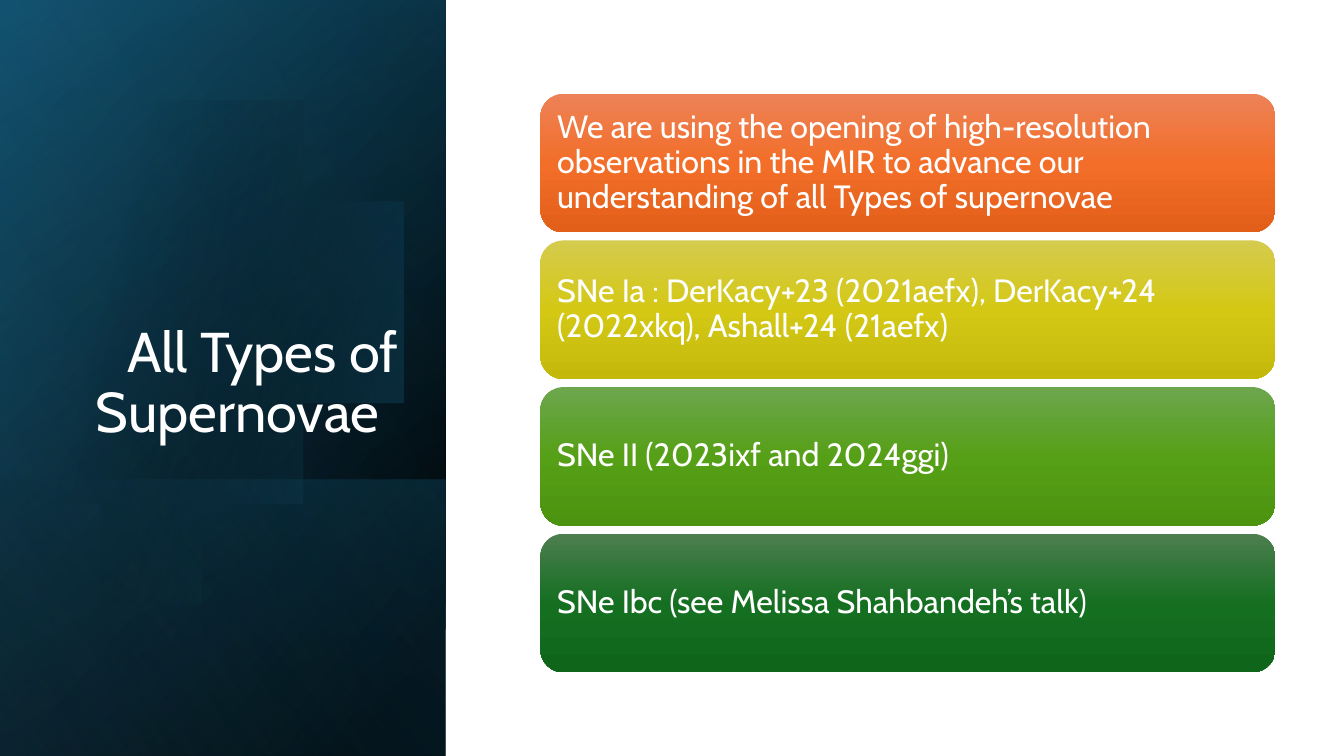
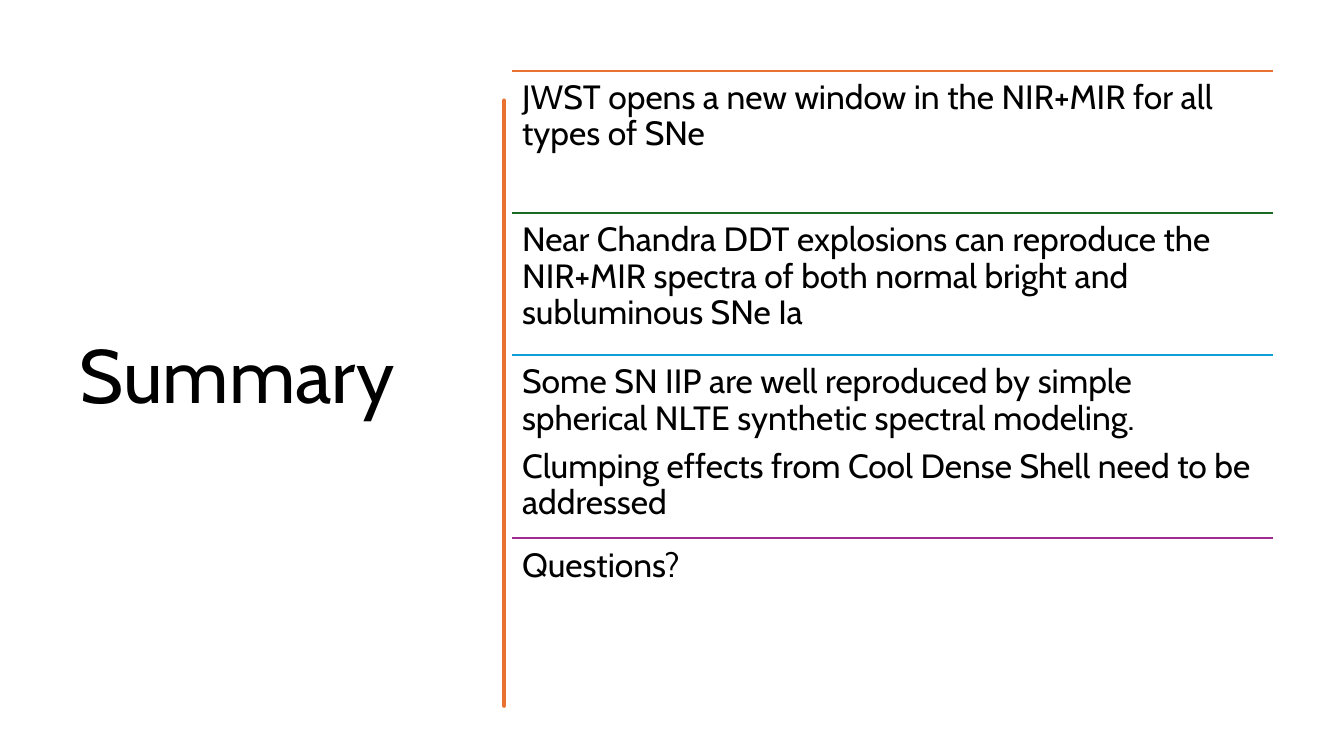
from math import asin, cos, pi, sin

from lxml.etree import SubElement
from pptx import Presentation
from pptx.dml.color import RGBColor
from pptx.enum.shapes import MSO_CONNECTOR, MSO_SHAPE
from pptx.enum.text import MSO_ANCHOR, PP_ALIGN
from pptx.oxml.ns import qn
from pptx.util import Inches, Pt

FONT = "Cabin"
WHITE, BLACK = "FFFFFF", "000000"
ORANGE, GREEN, BLUE, PURPLE = "E97132", "196B24", "0F9ED5", "A02B93"
TEAL, DEEP_TEAL, SKY = "156082", "104862", "46B1E1"

TOPICS = [
    ("We are using the opening of high-resolution observations in the MIR "
     "to advance our understanding of all Types of supernovae",
     ("ED8257", "F26E29", "E25F1A")),
    ("SNe Ia : DerKacy+23 (2021aefx), DerKacy+24 (2022xkq), Ashall+24 (21aefx)",
     ("D5CB4E", "D4C815", "C4B90B")),
    ("SNe II (2023ixf and 2024ggi)", ("6DA64E", "56A017", "4C930F")),
    ("SNe Ibc (see Melissa Shahbandeh’s talk)", ("4D7E50", "156F21", "0F661B")),
]

# rule colour, row height, paragraphs
CONCLUSIONS = [
    (ORANGE, 1.41, ["JWST opens a new window in the NIR+MIR for all types of SNe"]),
    (GREEN, 1.41, ["Near Chandra DDT explosions can reproduce the NIR+MIR spectra "
                   "of both normal bright and subluminous SNe Ia"]),
    (BLUE, 1.82, ["Some SN IIP are well reproduced by simple spherical NLTE "
                  "synthetic spectral modeling.",
                  "Clumping effects from Cool Dense Shell need to be addressed"]),
    (PURPLE, 1.41, ["Questions?"]),
]


def rgb(color):
    return RGBColor.from_string(color)


def fill_gradient(sp, stops, angle):
    """Fill with (position %, colour, opacity %) stops, angle clockwise, no outline."""
    sp.shadow.inherit = False
    sp.line.fill.background()
    sp.fill.gradient()
    grad = sp._element.spPr.find(qn("a:gradFill"))
    for child in list(grad):
        grad.remove(child)
    stop_list = SubElement(grad, qn("a:gsLst"))
    for pos, color, opacity in stops:
        gs = SubElement(stop_list, qn("a:gs"), pos=str(pos * 1000))
        clr = SubElement(gs, qn("a:srgbClr"), val=color)
        if opacity < 100:
            SubElement(clr, qn("a:alpha"), val=str(opacity * 1000))
    SubElement(grad, qn("a:lin"), ang=str(angle * 60000), scaled="0")


def write_text(sp, paragraphs, size, color, anchor=MSO_ANCHOR.TOP,
               align=PP_ALIGN.LEFT, inset=0.1, after=0):
    tf = sp.text_frame
    tf.word_wrap = True
    tf.vertical_anchor = anchor
    tf.margin_left = tf.margin_right = Inches(0.1)
    tf.margin_top = tf.margin_bottom = Inches(inset)
    for i, text in enumerate(paragraphs):
        p = tf.add_paragraph() if i else tf.paragraphs[0]
        p.alignment = align
        p.line_spacing = 0.9
        p.space_after = Pt(after)
        r = p.add_run()
        r.text = text
        r.font.name = FONT
        r.font.size = Pt(size)
        r.font.color.rgb = rgb(color)


def add_text(s, box, paragraphs, size, color, **style):
    sp = s.shapes.add_textbox(*map(Inches, box))
    write_text(sp, paragraphs, size, color, **style)


def add_title(s, box, text, size, color, **style):
    add_text(s, box, [text], size, color, inset=0.05, **style)


def add_outline(s, points):
    builder = s.shapes.build_freeform(*points[0], scale=Inches(1))
    builder.add_line_segments(points[1:], close=True)
    return builder.convert_to_shape()


def add_gradient_rect(s, box, stops, angle):
    sp = s.shapes.add_shape(MSO_SHAPE.RECTANGLE, *map(Inches, box))
    fill_gradient(sp, stops, angle)


def add_disc(s, box, radius, center_x, center_y):
    """Disc cut off by the left edge of the box."""
    x, y = box[0] + center_x, box[1] + center_y
    cut = pi / 2 + asin(center_x / radius)
    steps = 120
    angles = [-cut + 2 * cut * i / steps for i in range(steps + 1)]
    sp = add_outline(s, [(x + radius * cos(a), y + radius * sin(a)) for a in angles])
    fill_gradient(sp, [(29, BLACK, 0), (100, TEAL, 43)], 14)


def add_side_panel(s, box):
    x, y, w, h = box
    foot = 2.74
    add_gradient_rect(s, box, [(8, BLACK, 100), (100, DEEP_TEAL, 100)], 220)
    add_gradient_rect(s, box, [(0, BLACK, 0), (99, TEAL, 46)], 240)
    add_gradient_rect(s, (x, y + h - foot, w, foot),
                      [(2, TEAL, 29), (100, BLACK, 30)], 140)
    add_disc(s, box, 2.28, 1.44, 3.36)
    add_gradient_rect(s, box, [(0, BLACK, 0), (99, SKY, 11)], 150)


def add_cards(s, box, topics, gap=0.08):
    x, y, w, h = box
    card_h = (h - gap * (len(topics) - 1)) / len(topics)
    for i, (text, colors) in enumerate(topics):
        top = y + i * (card_h + gap)
        sp = s.shapes.add_shape(MSO_SHAPE.ROUNDED_RECTANGLE,
                                *map(Inches, (x, top, w, card_h)))
        fill_gradient(sp, [(50 * k, c, 100) for k, c in enumerate(colors)], 90)
        write_text(sp, [text], 23, WHITE, anchor=MSO_ANCHOR.MIDDLE, after=8)


def add_brush_stroke(s, box):
    """Vertical hand-drawn bar whose two edges waver along the box."""
    x, y, w, h = box
    left_waver = [0, 0.01, -0.01, 0.01, 0, 0, -0.01, 0.01, 0, -0.01, 0, 0, 0]
    right_waver = [0, 0.01, 0, 0.01, 0, 0.01, 0, 0.01, 0, 0.02, 0, 0.01, 0]
    step = h / (len(left_waver) - 1)
    left = [(x + d, y + i * step) for i, d in enumerate(left_waver)]
    right = [(x + w + d, y + i * step) for i, d in enumerate(right_waver)]
    sp = add_outline(s, left + right[::-1])
    sp.shadow.inherit = False
    sp.fill.solid()
    sp.fill.fore_color.rgb = rgb(ORANGE)
    sp.line.color.rgb = rgb(ORANGE)
    sp.line.width = Pt(3.25)
    SubElement(sp.line._get_or_add_ln(), qn("a:round"))


def add_rule(s, x, y, w, color):
    line = s.shapes.add_connector(MSO_CONNECTOR.STRAIGHT,
                                  *map(Inches, (x, y, x + w, y)))
    line.line.color.rgb = rgb(color)
    line.line.width = Pt(1.5)
    SubElement(line._element.spPr, qn("a:effectLst"))


def add_ruled_rows(s, x, y, w, rows):
    for color, row_h, paragraphs in rows:
        add_rule(s, x, y, w, color)
        add_text(s, (x, y, w, row_h), paragraphs, 24, BLACK, after=8.4)
        y += row_h


def build_types_slide(s):
    add_side_panel(s, (0, 0, 4.42, 7.5))
    add_title(s, (0.64, 1.84, 3.41, 2.62), "All Types of Supernovae\t", 40, WHITE,
              anchor=MSO_ANCHOR.BOTTOM, align=PP_ALIGN.RIGHT)
    add_cards(s, (5.36, 0.93, 7.29, 5.74), TOPICS)


def build_summary_slide(s):
    add_title(s, (0.69, 0.7, 3.74, 6.11), "Summary", 54, BLACK,
              anchor=MSO_ANCHOR.MIDDLE)
    add_brush_stroke(s, (4.73, 0.84, 0.02, 5.92))
    add_ruled_rows(s, 5.08, 0.7, 7.55, CONCLUSIONS)


def main():
    prs = Presentation()
    prs.slide_width, prs.slide_height = Inches(13.33), Inches(7.5)
    for build in (build_types_slide, build_summary_slide):
        build(prs.slides.add_slide(prs.slide_layouts[6]))
    prs.save("out.pptx")


if __name__ == "__main__":
    main()
